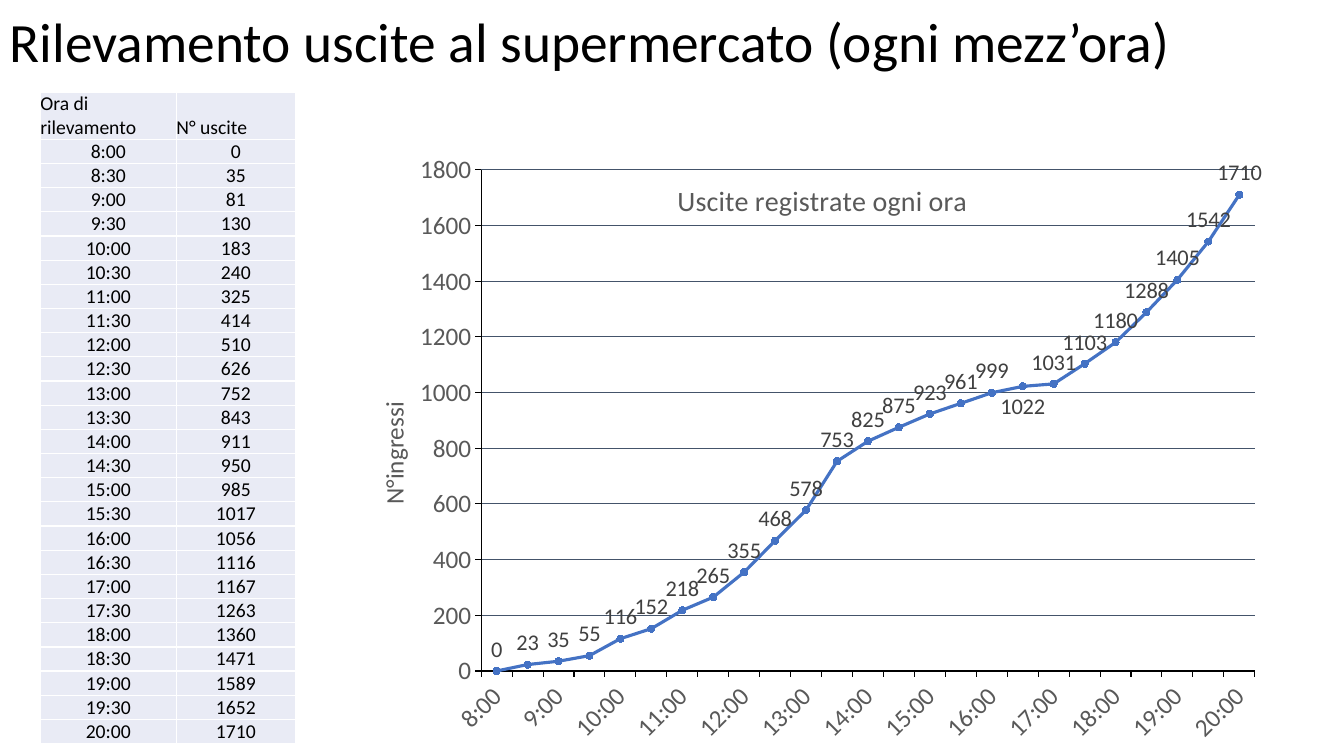
from dataclasses import dataclass
from typing import Any

from lxml import etree
from pptx import Presentation, util as u
from pptx.chart.data import CategoryChartData
from pptx.dml.color import RGBColor
from pptx.enum import chart as ec, text as et
from pptx.oxml import ns

BLACK = RGBColor(0x00, 0x00, 0x00)
WHITE = RGBColor(0xFF, 0xFF, 0xFF)
PALE_BLUE = RGBColor(0xE9, 0xEB, 0xF5)
BLUE = RGBColor(0x44, 0x72, 0xC4)
SLATE = RGBColor(0x44, 0x54, 0x6A)
GREY = RGBColor(0x59, 0x59, 0x59)
DARK_GREY = RGBColor(0x40, 0x40, 0x40)
FONT = "Calibri"


@dataclass(frozen=True)
class Frame:
    left: float
    top: float
    width: float
    height: float

    def lengths(self) -> list[u.Length]:
        return [u.Pt(n) for n in (self.left, self.top, self.width, self.height)]


@dataclass(frozen=True)
class Reading:
    time: str
    table_exits: int
    chart_exits: int


TABLE_EXITS = [0, 35, 81, 130, 183, 240, 325, 414, 510, 626, 752, 843, 911,
               950, 985, 1017, 1056, 1116, 1167, 1263, 1360, 1471, 1589, 1652, 1710]
CHART_EXITS = [0, 23, 35, 55, 116, 152, 218, 265, 355, 468, 578, 753, 825,
               875, 923, 961, 999, 1022, 1031, 1103, 1180, 1288, 1405, 1542, 1710]
READINGS = [
    Reading(f"{8 + i // 2}:{i % 2 * 30:02d}", in_table, in_chart)
    for i, (in_table, in_chart) in enumerate(zip(TABLE_EXITS, CHART_EXITS))
]
LABEL_BELOW = 17

HEADING = Frame(0, 7.2, 886.3, 49)
EXITS_TABLE = Frame(28.8, 65.9, 182.2, 460.8)
EXITS_CHART = Frame(259.2, 107.3, 650.2, 465.1)
COLUMN_WIDTHS = (97.2, 85)
HEADER_HEIGHT = 28.8
READING_HEIGHT = 17.28


def apply(target: Any, formats: dict[str, Any]) -> None:
    for name, value in formats.items():
        setattr(target, name, value)


def style_font(font: Any, size: float, color: RGBColor) -> None:
    apply(font, {"name": FONT, "size": u.Pt(size), "bold": False})
    font.fill.solid()
    font.fill.fore_color.rgb = color


def style_line(line: Any, width: float, color: RGBColor) -> None:
    line.width = u.Pt(width)
    line.fill.solid()
    line.fill.fore_color.rgb = color


def place(parent: Any, inner: bool = False, **fractions: float) -> None:
    layout = parent.find(ns.qn("c:layout"))
    if layout is None:
        layout = etree.Element(ns.qn("c:layout"))
        parent.insert(0, layout)
    manual = etree.SubElement(layout, ns.qn("c:manualLayout"))
    settings = {"layoutTarget": "inner"} if inner else {}
    settings |= {"xMode": "edge", "yMode": "edge"} | fractions
    for tag, value in settings.items():
        etree.SubElement(manual, ns.qn(f"c:{tag}")).set("val", str(value))


def write_title(title: Any, words: str, size: float, x: float, y: float) -> None:
    run = title.text_frame.paragraphs[0].add_run()
    run.text = words
    style_font(run.font, size, GREY)
    place(title._element, x=x, y=y)


def add_heading(slide: Any, words: str) -> None:
    frame = slide.shapes.add_textbox(*HEADING.lengths()).text_frame
    apply(frame, {"word_wrap": True, "vertical_anchor": et.MSO_ANCHOR.MIDDLE})
    paragraph = frame.paragraphs[0]
    apply(paragraph, {"text": words, "line_spacing": 0.9})
    style_font(paragraph.runs[0].font, 39.6, BLACK)


def add_borders(cell: Any, color: RGBColor) -> None:
    properties = cell._tc.get_or_add_tcPr()
    for i, side in enumerate(("lnL", "lnR", "lnT", "lnB")):
        border = etree.Element(ns.qn(f"a:{side}"), w=str(u.Pt(1)))
        fill = etree.SubElement(border, ns.qn("a:solidFill"))
        etree.SubElement(fill, ns.qn("a:srgbClr"), val=str(color))
        properties.insert(i, border)


def fill_cell(cell: Any, words: str, alignment: Any) -> None:
    margins = dict.fromkeys(("margin_left", "margin_top", "margin_right", "margin_bottom"), 0)
    apply(cell, margins | {"text": words, "vertical_anchor": et.MSO_ANCHOR.BOTTOM})
    cell.fill.solid()
    cell.fill.fore_color.rgb = PALE_BLUE
    add_borders(cell, WHITE)
    paragraph = cell.text_frame.paragraphs[0]
    paragraph.alignment = alignment
    style_font(paragraph.runs[0].font, 14, BLACK)


def add_exits_table(slide: Any) -> None:
    rows = [("Ora di rilevamento", "N° uscite")]
    rows += [(reading.time, str(reading.table_exits)) for reading in READINGS]
    table = slide.shapes.add_table(len(rows), 2, *EXITS_TABLE.lengths()).table
    apply(table, {"first_row": False, "horz_banding": False})
    for column, width in zip(table.columns, COLUMN_WIDTHS):
        column.width = u.Pt(width)
    for r, row in enumerate(rows):
        table.rows[r].height = u.Pt(READING_HEIGHT if r else HEADER_HEIGHT)
        for c, words in enumerate(row):
            fill_cell(table.cell(r, c), words, et.PP_ALIGN.CENTER if r else et.PP_ALIGN.LEFT)


def style_axis(axis: Any) -> None:
    apply(axis, {"major_tick_mark": ec.XL_TICK_MARK.OUTSIDE,
                 "minor_tick_mark": ec.XL_TICK_MARK.NONE})
    style_font(axis.tick_labels.font, 18, GREY)
    style_line(axis.format.line, 0.75, BLACK)


def style_axes(chart: Any) -> None:
    hours, exits = chart.category_axis, chart.value_axis
    for axis in (hours, exits):
        style_axis(axis)
    hours.has_major_gridlines = False
    hours_xml = hours._element
    hours_xml.find(f"{ns.qn('c:txPr')}/{ns.qn('a:bodyPr')}").set("rot", "-2700000")
    skip = etree.Element(ns.qn("c:tickLblSkip"), val="2")
    hours_xml.find(ns.qn("c:noMultiLvlLbl")).addprevious(skip)
    apply(exits, {"minimum_scale": 0, "maximum_scale": 1800, "major_unit": 200,
                  "has_major_gridlines": True})
    apply(exits.tick_labels, {"number_format": "0", "number_format_is_linked": False})
    style_line(exits.major_gridlines.format.line, 0.75, SLATE)
    write_title(exits.axis_title, "N°ingressi", 18, 0.01, 0.38)


def style_series(plot: Any) -> None:
    plot.vary_by_categories = False
    series = plot.series[0]
    series.smooth = False
    style_line(series.format.line, 2.25, BLUE)
    apply(series.marker, {"style": ec.XL_MARKER_STYLE.CIRCLE, "size": 5})
    series.marker.format.fill.solid()
    series.marker.format.fill.fore_color.rgb = BLUE
    style_line(series.marker.format.line, 0.75, BLUE)
    labels = series.data_labels
    apply(labels, {"show_value": True, "position": ec.XL_LABEL_POSITION.ABOVE,
                   "number_format": "0", "number_format_is_linked": False})
    style_font(labels.font, 16, DARK_GREY)
    lowered = series.points[LABEL_BELOW].data_label
    style_font(lowered.font, 16, DARK_GREY)
    lowered.position = ec.XL_LABEL_POSITION.BELOW


def add_exits_chart(slide: Any) -> None:
    exits = CategoryChartData(number_format="0")
    exits.categories = [reading.time for reading in READINGS]
    exits.add_series("Uscite", [reading.chart_exits for reading in READINGS])
    chart = slide.shapes.add_chart(
        ec.XL_CHART_TYPE.LINE_MARKERS_STACKED, *EXITS_CHART.lengths(), exits).chart
    apply(chart, {"has_legend": False, "has_title": True})
    style_font(chart.font, 10, BLACK)
    write_title(chart.chart_title, "Uscite registrate ogni ora", 20, 0.34, 0.04)
    chart.chart_title.include_in_layout = True
    style_axes(chart)
    style_series(chart.plots[0])
    place(chart._chartSpace.chart.plotArea, inner=True, x=0.13, y=0.03, w=0.85, h=0.77)


def main() -> None:
    deck = Presentation()
    apply(deck, {"slide_width": u.Pt(960), "slide_height": u.Pt(540)})
    slide = deck.slides.add_slide(deck.slide_layouts[6])
    add_heading(slide, "Rilevamento uscite al supermercato (ogni mezz’ora)")
    add_exits_chart(slide)
    add_exits_table(slide)
    deck.save("out.pptx")


if __name__ == "__main__":
    main()
